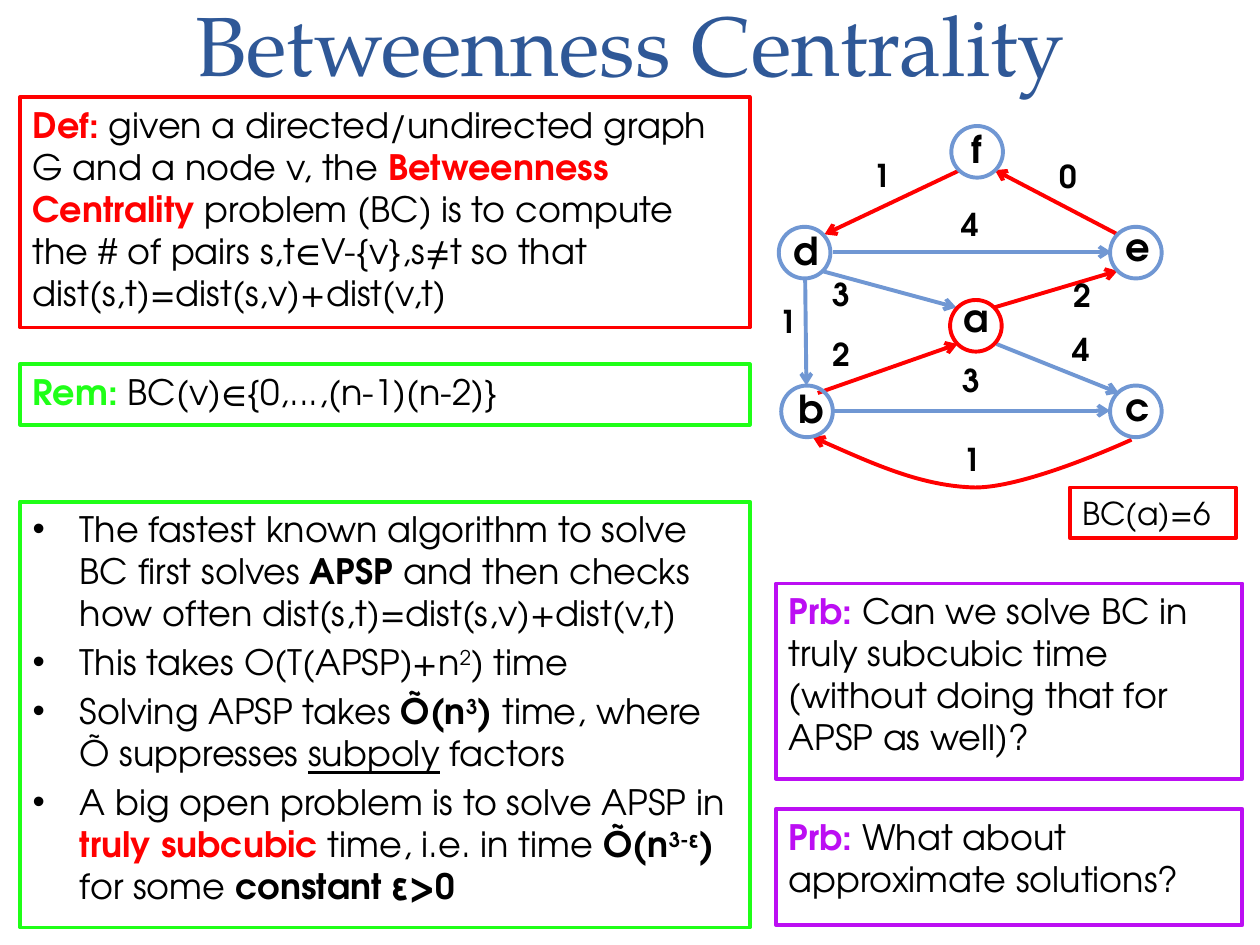
from dataclasses import dataclass
from typing import NamedTuple

from lxml import etree
from pptx import Presentation
from pptx.dml.color import RGBColor
from pptx.enum.shapes import MSO_CONNECTOR, MSO_SHAPE
from pptx.enum.text import MSO_ANCHOR, PP_ALIGN
from pptx.oxml.ns import qn
from pptx.util import Pt

STRAIGHT = MSO_CONNECTOR.STRAIGHT
RECT, OVAL = MSO_SHAPE.RECTANGLE, MSO_SHAPE.OVAL
TOP, MIDDLE, BOTTOM = MSO_ANCHOR.TOP, MSO_ANCHOR.MIDDLE, MSO_ANCHOR.BOTTOM
LEFT, CENTER = PP_ALIGN.LEFT, PP_ALIGN.CENTER


@dataclass(frozen=True)
class Theme:
    title_font: str = "TeX Gyre Pagella"
    font: str = "TeX Gyre Adventor"
    navy: str = "2F5897"
    blue: str = "7097D3"
    red: str = "FF0000"
    green: str = "1FFF17"
    purple: str = "BC0EF3"
    black: str = "000000"
    title: float = 48
    node: float = 22
    body: float = 20
    label: float = 18
    stroke: float = 2.25
    gap: float = 4
    indent: float = 27


T = Theme()


class Span(NamedTuple):
    text: str
    bold: bool = False
    color: str = T.black
    raised: bool = False
    underline: bool = False


class Node(NamedTuple):
    name: str
    x: float
    y: float
    label_x: float
    label_y: float
    label_w: float


class Edge(NamedTuple):
    x1: float
    y1: float
    x2: float
    y2: float
    weight: str
    label_x: float
    label_y: float
    on_path: bool = False


class Box(NamedTuple):
    x: float
    y: float
    w: float
    h: float
    color: str
    paragraphs: list[list[Span]]
    bullets: bool = False


NODE_SIZE = 29.5
NODES = [
    Node("f", 543.6, 72, 547.9, 67.7, 20.9),
    Node("e", 634.3, 129.6, 635.8, 123.8, 28.8),
    Node("d", 445, 129.6, 445.7, 126, 29.5),
    Node("a", 542.9, 171.4, 542.9, 164.2, 29.5),
    Node("b", 446.4, 220.3, 448.6, 216.7, 29.5),
    Node("c", 634.3, 220.3, 635.8, 215.3, 28.8),
]
EDGES = [
    Edge(476, 234.7, 634.3, 234.7, "3", 542.9, 203),
    Edge(467.3, 224.6, 547.2, 196.6, "2", 468.7, 187.9, True),
    Edge(569.5, 196.6, 639.4, 224.6, "4", 605.5, 185),
    Edge(469.4, 154.8, 546.5, 175.7, "3", 468.7, 153.4),
    Edge(568.1, 175.7, 638.6, 154.8, "2", 606.2, 154.1, True),
    Edge(476, 144, 635, 144, "4", 542.2, 113.8),
    Edge(638.6, 133.9, 568.5, 97.2, "0", 598.3, 86.4, True),
    Edge(548.6, 97.2, 471.2, 133.9, "1", 491.8, 85.7, True),
    Edge(460.1, 159.1, 460.8, 220.3, "1", 438.5, 169.2),
]
ARC = [(464.4, 249.8), (495.4, 263.5), (527, 277.9), (557.3, 278.6),
       (587.5, 278.6), (646.6, 251.3), (646.6, 251.3)]

BOXES = [
    Box(11.5, 55.4, 416.9, 131.8, T.red, [[
        Span("Def: ", True, T.red),
        Span("given a directed/undirected graph G and a node v, the "),
        Span("Betweenness Centrality", True, T.red),
        Span(" problem (BC) is to compute the # of pairs s,t∈V-{v},s≠t so that "
             "dist(s,t)=dist(s,v)+dist(v,t)")]]),
    Box(11.5, 208.1, 416.9, 34.6, T.green, [[
        Span("Rem:", True, T.green), Span(" BC(v)∈{0,...,(n-1)(n-2)}")]]),
    Box(11.5, 286.6, 416.9, 243.4, T.green, [
        [Span("The fastest known algorithm to solve BC first solves "),
         Span("APSP ", True),
         Span("and then checks how often dist(s,t)=dist(s,v)+dist(v,t)")],
        [Span("This takes O(T(APSP)+n"), Span("2", raised=True), Span(") time")],
        [Span("Solving APSP takes "), Span("Õ(n", True),
         Span("3", True, raised=True), Span(") ", True),
         Span("time, where Õ suppresses "), Span("subpoly", underline=True),
         Span(" factors")],
        [Span("A big open problem is to solve APSP in "),
         Span("truly subcubic", True, T.red), Span(" time, i.e. in time "),
         Span("Õ(n", True), Span("3-ε", True, raised=True), Span(")", True),
         Span(" for some "), Span("constant ε>0", True)]], bullets=True),
    Box(443.5, 333.4, 266.4, 111.6, T.purple, [[
        Span("Prb: ", True, T.purple),
        Span("Can we solve BC in truly subcubic time "
             "(without doing that for APSP as well)?")]]),
    Box(443.5, 462.2, 266.4, 66.5, T.purple, [[
        Span("Prb: ", True, T.purple),
        Span("What about approximate solutions?")]]),
]


def add_run(p, text: str, *, size: float = T.body, color: str = T.black,
            bold: bool = False, font: str = T.font, raised: bool = False,
            underline: bool = False) -> None:
    r = p.add_run()
    r.text = text
    r.font.name, r.font.size, r.font.bold = font, Pt(size), bold
    r.font.color.rgb = RGBColor.from_string(color)
    if underline:
        r.font.underline = True
    if raised:
        r.font._element.set("baseline", "30000")


def outline(sp, color: str) -> None:
    sp.line.color.rgb = RGBColor.from_string(color)
    sp.line.width = Pt(T.stroke)


def add_arrowhead(sp, end: str) -> None:
    etree.SubElement(sp.line._get_or_add_ln(), qn(f"a:{end}"), type="arrow")


def add_outline_shape(s, kind, x: float, y: float, w: float, h: float, color: str):
    sp = s.shapes.add_shape(kind, Pt(x), Pt(y), Pt(w), Pt(h))
    sp.shadow.inherit = False
    sp.fill.background()
    outline(sp, color)
    return sp


def add_label(s, text: str, x: float, y: float, w: float, h: float, *,
              wrap: bool = False, anchor=TOP, **fmt):
    tf = s.shapes.add_textbox(Pt(x), Pt(y), Pt(w), Pt(h)).text_frame
    tf.word_wrap, tf.vertical_anchor = wrap, anchor
    p = tf.paragraphs[0]
    p.alignment = CENTER
    add_run(p, text, **fmt)
    return p


def add_line(s, edge: Edge, color: str) -> None:
    sp = s.shapes.add_connector(STRAIGHT, *map(Pt, edge[:4]))
    outline(sp, color)
    add_arrowhead(sp, "tailEnd")
    etree.SubElement(sp._element.spPr, qn("a:effectLst"))


def add_arc(s, points: list[tuple[float, float]], color: str) -> None:
    start, *rest = [(Pt(x), Pt(y)) for x, y in points]
    fb = s.shapes.build_freeform(*start)
    fb.add_line_segments(rest, close=False)
    sp = fb.convert_to_shape()
    sp.shadow.inherit = False
    sp.fill.background()
    outline(sp, color)
    add_arrowhead(sp, "headEnd")
    segments = list(sp._element.iter(qn("a:lnTo")))
    for i in range(0, len(segments), 3):
        curve = etree.Element(qn("a:cubicBezTo"))
        segments[i].addprevious(curve)
        for segment in segments[i:i + 3]:
            curve.append(segment[0])
            segment.getparent().remove(segment)


def add_box(s, box: Box) -> None:
    tf = add_outline_shape(s, RECT, *box[:5]).text_frame
    tf.word_wrap, tf.vertical_anchor = True, TOP
    for i, spans in enumerate(box.paragraphs):
        p = tf.add_paragraph() if i else tf.paragraphs[0]
        p.alignment, p.space_before = LEFT, Pt(T.gap)
        if box.bullets:
            pPr = p._p.get_or_add_pPr()
            pPr.set("marL", str(Pt(T.indent)))
            pPr.set("indent", str(-Pt(T.indent)))
            etree.SubElement(pPr, qn("a:buFont"), typeface="Arial")
            etree.SubElement(pPr, qn("a:buChar"), char="•")
        for span in spans:
            add_run(p, **span._asdict())


def add_graph(s) -> None:
    for edge in EDGES:
        add_line(s, edge, T.red if edge.on_path else T.blue)
        add_label(s, edge.weight, edge.label_x, edge.label_y, 24.5, 28.8,
                  size=T.label, bold=True)
    add_arc(s, ARC, T.red)
    add_label(s, "1", 543.6, 247.7, 24.5, 28.8, size=T.label, bold=True)
    for node in NODES:
        color = T.red if node.name == "a" else T.blue
        add_outline_shape(s, OVAL, node.x, node.y, NODE_SIZE, NODE_SIZE, color)
        add_label(s, node.name, node.label_x, node.label_y, node.label_w, 33.8,
                  size=T.node, bold=True)


def main() -> None:
    prs = Presentation()
    prs.slide_width, prs.slide_height = Pt(720), Pt(540)
    s = prs.slides.add_slide(prs.slide_layouts[6])
    p = add_label(s, "Betweenness Centrality", 0, 0.7, 720, 56.2, wrap=True,
                  anchor=BOTTOM, size=T.title, color=T.navy, font=T.title_font)
    p.line_spacing = Pt(58)
    add_graph(s)
    for box in BOXES:
        add_box(s, box)
    result = add_outline_shape(s, RECT, 611.3, 278.6, 95, 28.8, T.red).text_frame
    result.vertical_anchor = MIDDLE
    result.paragraphs[0].alignment = LEFT
    add_run(result.paragraphs[0], "BC(a)=6", size=T.label)
    prs.save("out.pptx")


if __name__ == "__main__":
    main()
